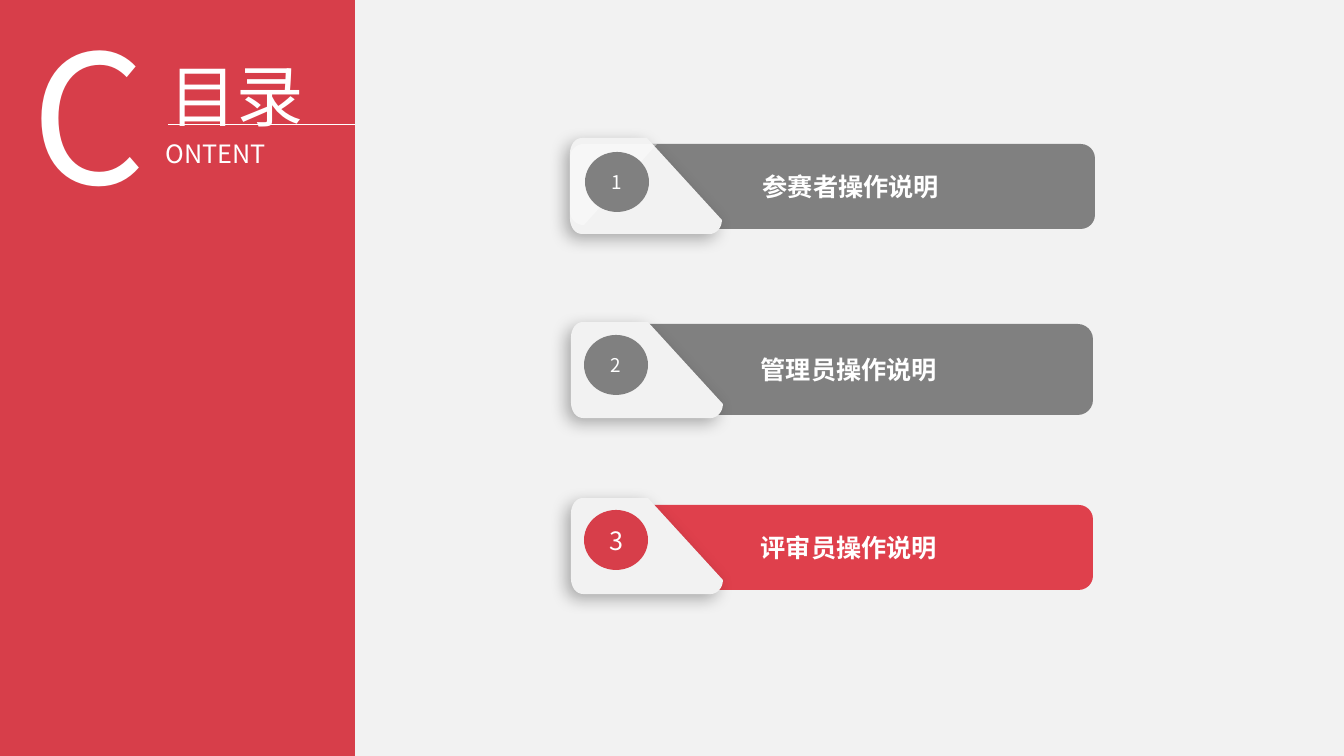
from dataclasses import dataclass

from lxml.etree import SubElement
from pptx import Presentation
from pptx.dml.color import RGBColor
from pptx.enum.shapes import MSO_CONNECTOR as Connector, MSO_SHAPE as Preset
from pptx.enum.text import MSO_ANCHOR as Anchor, MSO_AUTO_SIZE as AutoSize, PP_ALIGN as Align
from pptx.oxml.ns import qn
from pptx.util import Emu, Pt

SCALE = 914400 / 100.8
FONT = "Noto Sans CJK SC"
COLORS = {
    "paper": "F2F2F2",
    "panel": "D73E4A",
    "active": "DF404C",
    "muted": "808080",
    "white": "FFFFFF",
    "shadow": "000000",
}
CURVE_STEPS = 8

Point = tuple[float, float]
Segment = tuple[Point, ...]

TAB: list[Segment] = [
    ((12, 0),),
    ((77, 0),),
    ((152, 82),),
    ((152, 90), (146, 96), (140, 96)),
    ((12, 96),),
    ((5, 96), (0, 89), (0, 80)),
    ((0, 16),),
    ((0, 7), (5, 0), (12, 0)),
]
GLOSS: list[Segment] = [
    ((14, 0),),
    ((87, 0),),
    ((14, 81),),
    ((6, 81), (0, 75), (0, 67)),
    ((0, 14),),
    ((0, 6), (6, 0), (14, 0)),
]


@dataclass(frozen=True)
class Box:
    left: int
    top: int
    width: int
    height: int

    def emu(self) -> tuple[Emu, ...]:
        return tuple(px(value) for value in (self.left, self.top, self.width, self.height))


@dataclass(frozen=True)
class Entry:
    number: str
    label: str
    bar: Box
    tab: Point
    badge: Point
    bar_color: str
    badge_color: str
    number_size: float
    glossy: bool = False


ENTRIES = [
    Entry("1", "参赛者操作说明", Box(607, 144, 488, 85), (570, 138), (585, 152),
          "muted", "muted", 13.5, True),
    Entry("2", "管理员操作说明", Box(605, 324, 488, 91), (571, 322), (584, 335),
          "muted", "muted", 13.5),
    Entry("3", "评审员操作说明", Box(605, 505, 488, 85), (571, 498), (584, 510),
          "active", "panel", 18),
]


def px(value: float) -> Emu:
    return Emu(round(value * SCALE))


def color(name: str) -> RGBColor:
    return RGBColor.from_string(COLORS[name])


def paint(shape, fill: str) -> None:
    shape.shadow.inherit = False
    shape.fill.solid()
    shape.fill.fore_color.rgb = color(fill)
    shape.line.fill.background()


def write(shape, text: str, size: float, align: Align, bold: bool = False) -> None:
    para = shape.text_frame.paragraphs[0]
    para.text = text
    para.alignment = align
    span = para.runs[0]
    span.font.size = Pt(size)
    span.font.bold = bold
    span.font.name = FONT
    span.font.color.rgb = color("white")
    SubElement(span.font._element, qn("a:ea"), typeface=FONT)


def add_preset(page, preset: Preset, box: Box, fill: str):
    shape = page.shapes.add_shape(preset, *box.emu())
    paint(shape, fill)
    shape.text_frame.vertical_anchor = Anchor.MIDDLE
    return shape


def add_heading(page, box: Box, text: str, size: float) -> None:
    shape = page.shapes.add_textbox(*box.emu())
    shape.text_frame.word_wrap = True
    shape.text_frame.auto_size = AutoSize.SHAPE_TO_FIT_TEXT
    write(shape, text, size, Align.JUSTIFY)


def curve(points: list[Point]) -> list[Point]:
    result = []
    for step in range(1, CURVE_STEPS + 1):
        t = step / CURVE_STEPS
        weights = ((1 - t) ** 3, 3 * t * (1 - t) ** 2, 3 * t * t * (1 - t), t ** 3)
        result.append(tuple(sum(w * p[axis] for w, p in zip(weights, points)) for axis in (0, 1)))
    return result


def add_outline(page, origin: Point, segments: list[Segment], fill: str):
    points: list[Point] = []
    for segment in segments:
        points += segment if len(segment) == 1 else curve([points[-1], *segment])
    placed = [(px(origin[0] + x), px(origin[1] + y)) for x, y in points]
    builder = page.shapes.build_freeform(*placed[0])
    builder.add_line_segments(placed[1:], close=True)
    shape = builder.convert_to_shape()
    paint(shape, fill)
    return shape


def add_soft_shadow(shape) -> None:
    effects = shape._element.spPr.find(qn("a:effectLst"))
    shadow = SubElement(effects, qn("a:outerShdw"), blurRad=str(Pt(12)), dist=str(Pt(5)),
                        dir="8100000", algn="tr", rotWithShape="0")
    tint = SubElement(shadow, qn("a:srgbClr"), val=COLORS["shadow"])
    SubElement(tint, qn("a:alpha"), val="30000")


def add_entry(page, entry: Entry) -> None:
    bar = add_preset(page, Preset.ROUNDED_RECTANGLE, entry.bar, entry.bar_color)
    write(bar, entry.label, 18, Align.CENTER, True)
    add_soft_shadow(add_outline(page, entry.tab, TAB, "paper"))
    if entry.glossy:
        gloss = add_outline(page, (570, 144), GLOSS, "white")
        tint = gloss._element.spPr.find(qn("a:solidFill"))[0]
        SubElement(tint, qn("a:alpha"), val="41000")
    badge = add_preset(page, Preset.OVAL, Box(*entry.badge, 64, 60), entry.badge_color)
    write(badge, entry.number, entry.number_size, Align.CENTER)


def add_title(page) -> None:
    title = page.shapes.title
    title.element.getparent().append(title.element)
    title.left, title.top, title.width, title.height = Box(72, 9, 330, 118).emu()
    frame = title.text_frame
    frame.word_wrap = True
    frame.vertical_anchor = Anchor.TOP
    frame.auto_size = AutoSize.SHAPE_TO_FIT_TEXT
    write(title, "目录", 48, Align.CENTER)
    frame.paragraphs[0].line_spacing = 1.5
    frame.paragraphs[0].space_before = Pt(0)


def add_rule(page) -> None:
    rule = page.shapes.add_connector(Connector.STRAIGHT, px(168), px(125), px(355), px(125))
    rule.line.color.rgb = color("white")
    rule.line.width = Pt(0.75)
    SubElement(rule._element.spPr, qn("a:effectLst"))


def main() -> None:
    deck = Presentation()
    deck.slide_width, deck.slide_height = px(1344), px(756)
    page = deck.slides.add_slide(deck.slide_layouts[5])
    add_preset(page, Preset.RECTANGLE, Box(0, -8, 1344, 764), "paper")
    add_preset(page, Preset.RECTANGLE, Box(0, -8, 355, 764), "panel")
    add_title(page)
    add_heading(page, Box(156, 133, 190, 40), "ONTENT", 18)
    add_heading(page, Box(22, 0, 120, 228), "C", 128)
    add_rule(page)
    for entry in ENTRIES:
        add_entry(page, entry)
    deck.save("out.pptx")


if __name__ == "__main__":
    main()
